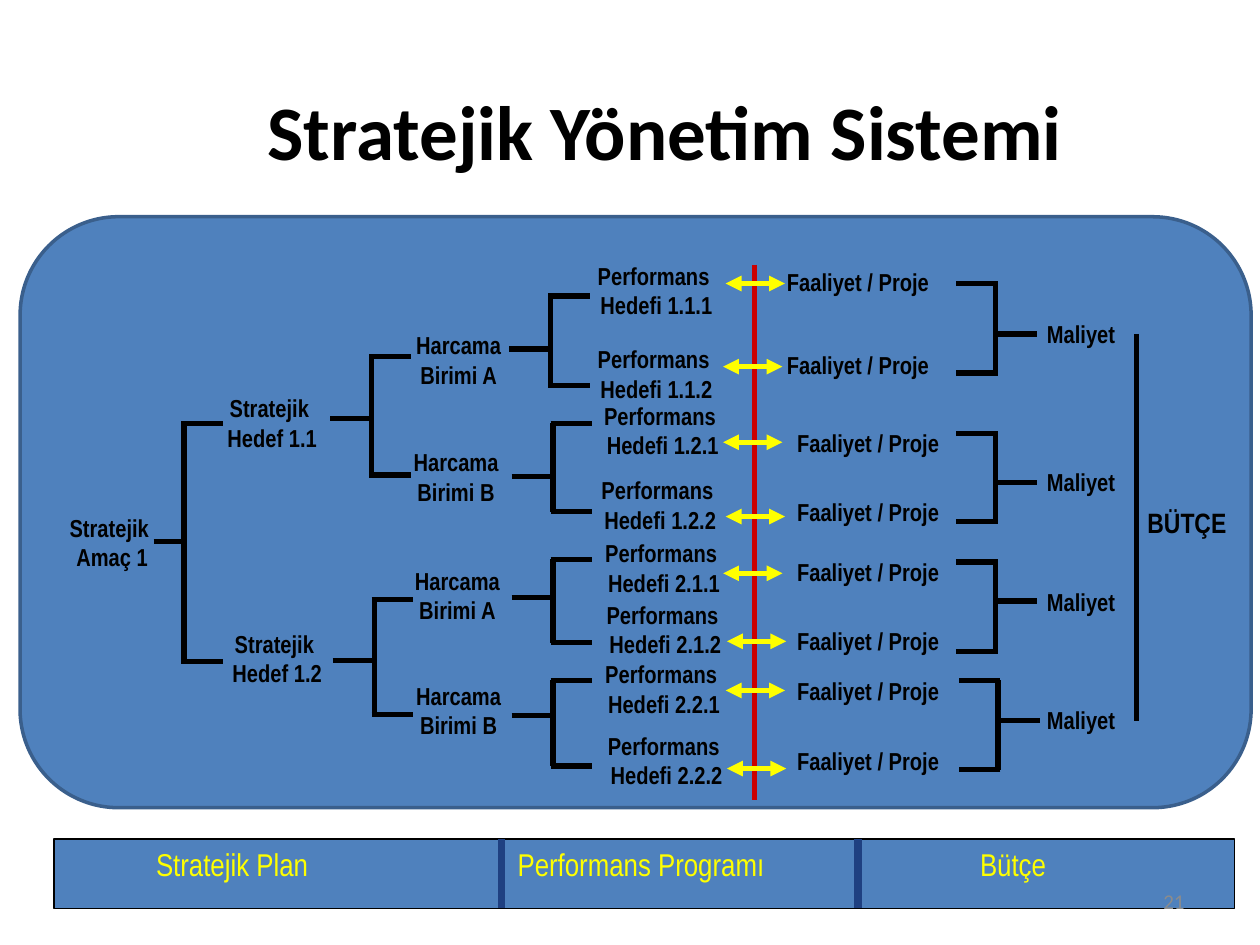
from math import copysign

from lxml.etree import SubElement
from pptx import Presentation
from pptx.dml.color import RGBColor
from pptx.enum.shapes import MSO_CONNECTOR, MSO_SHAPE
from pptx.enum.text import MSO_ANCHOR, PP_ALIGN
from pptx.oxml.ns import qn
from pptx.util import Inches, Pt

WIDTH, HEIGHT = Inches(10), Inches(7.5)
COLS, ROWS = 100, 75
NARROW, BODY = "Arial Narrow", "Calibri"
BLACK, BLUE, YELLOW = "000000", "4F81BD", "FFFF00"

# stub, spine, tip, top, middle, bottom
FORKS = [
    (12.2, 14.6, 17.7, 33.6, 43, 52.5),
    (26.2, 29.5, 32.6, 28.3, 33.2, 37.7),
    (26.4, 29.7, 32.8, 47.6, 52.4, 56.7),
    (40.4, 43.7, 46.8, 23.5, 27.7, 30.6),
    (40.6, 43.9, 47, 33.6, 37.8, 40.6),
    (40.6, 43.9, 47, 44.4, 47.4, 51),
    (40.6, 43.9, 47, 54, 56.8, 60.8),
    (82.3, 79, 75.9, 22.5, 26.5, 29.6),
    (82.3, 79, 75.9, 34.4, 38.3, 41.4),
    (82.3, 79, 75.9, 44.6, 47.7, 51.7),
    (82.5, 79.2, 76.1, 54, 57.2, 61.1),
]
BRANCHES = [
    ("Stratejik \nAmaç 1", 3.8, 39.9),
    ("Stratejik \nHedef 1.1", 16.5, 30.4),
    ("Stratejik \nHedef 1.2", 16.9, 49.1),
    ("Harcama\nBirimi A", 31.3, 25.4),
    ("Harcama\nBirimi B", 31.1, 34.7),
    ("Harcama\nBirimi A", 31.2, 44.1),
    ("Harcama\nBirimi B", 31.3, 53.2),
]
# number, target left and top, arrow left and row, activity left and top
TARGETS = [
    ("1.1.1", 47, 19.9, 57.6, 22.5, 60.2, 19.2),
    ("1.1.2", 47, 26.5, 57.4, 29.1, 60.2, 25.8),
    ("1.2.1", 47.5, 31, 57.4, 35.1, 61, 32),
    ("1.2.2", 47.3, 36.9, 57.6, 41, 61, 37.5),
    ("2.1.1", 47.6, 41.9, 57.4, 45.5, 61, 42.2),
    ("2.1.2", 47.7, 46.8, 57.7, 50.9, 61, 47.7),
    ("2.2.1", 47.6, 51.5, 57.6, 54.8, 61, 51.7),
    ("2.2.2", 47.8, 57.2, 57.7, 61, 61, 57.2),
]
COST_TOPS = [23.3, 35.1, 44.6, 54]
PHASES = [("Stratejik Plan", 11.4, 19.7), ("Performans Programı", 40.1, 34.7), ("Bütçe", 76.8, 19.7)]


def col(n):
    return round(WIDTH * n / COLS)


def row(n):
    return round(HEIGHT * n / ROWS)


def color(hex_code):
    return RGBColor.from_string(hex_code)


def add_panel(s, kind, x, y, w, h, line, weight):
    sp = s.shapes.add_shape(kind, col(x), row(y), col(w), row(h))
    sp.shadow.inherit = False
    sp.fill.solid()
    sp.fill.fore_color.rgb = color(BLUE)
    sp.line.color.rgb = color(line)
    sp.line.width = Pt(weight)


def add_line(s, x1, y1, x2, y2, line=BLACK, weight=3, arrows=False):
    sp = s.shapes.add_connector(MSO_CONNECTOR.STRAIGHT, col(x1), row(y1), col(x2), row(y2))
    sp.line.color.rgb = color(line)
    sp.line.width = Pt(weight)
    if arrows:
        ln = sp.line._get_or_add_ln()
        for end in ("a:headEnd", "a:tailEnd"):
            SubElement(ln, qn(end), type="triangle")
    SubElement(sp._element.spPr, qn("a:effectLst"))


def add_fork(s, stub, spine, tip, top, middle, bottom):
    corner = spine - copysign(0.2, tip - spine)
    add_line(s, stub, middle, spine, middle)
    add_line(s, spine, top, spine, bottom)
    for y in (top, bottom):
        add_line(s, corner, y, tip, y)


def add_text(s, text, x, y, w, h, size=14, font=NARROW, fill=BLACK, bold=True,
             align=PP_ALIGN.CENTER, anchor=MSO_ANCHOR.MIDDLE, wrap=True):
    tf = s.shapes.add_textbox(col(x), row(y), col(w), row(h)).text_frame
    tf.word_wrap = wrap
    tf.vertical_anchor = anchor
    tf.text = text
    for p in tf.paragraphs:
        p.alignment = align
        for r in p.runs:
            r.font.name = font
            r.font.size = Pt(size)
            r.font.bold = bold
            r.font.color.rgb = color(fill)
    return tf


def add_label(s, text, x, y, w=10.2, size=14):
    tf = add_text(s, text, x, y, w, 6.3, size, wrap=False)
    tf.margin_left = tf.margin_right = 0


def add_tree(s):
    for fork in FORKS:
        add_fork(s, *fork)
    for text, x, y in BRANCHES:
        add_label(s, text, x, y)
    add_line(s, 59.9, 21, 59.9, 63.5, "CC0000")
    for number, x, y, arrow_x, arrow_y, activity_x, activity_y in TARGETS:
        add_label(s, f"Performans \nHedefi {number}", x, y)
        add_line(s, arrow_x, arrow_y, arrow_x + 4.7, arrow_y, YELLOW, arrows=True)
        add_label(s, "Faaliyet / Proje", activity_x, activity_y, 15.8)
    for y in COST_TOPS:
        add_label(s, "Maliyet", 80.7, y)
    add_line(s, 90.2, 26.5, 90.2, 57.2)
    add_label(s, "BÜTÇE", 89.1, 38.3, size=16)


def add_phase_bar(s):
    add_panel(s, MSO_SHAPE.RECTANGLE, 4.3, 66.6, 93.7, 5.5, BLACK, 0.75)
    for x in (39.8, 68.1):
        add_line(s, x, 66.6, x, 72.1, "1F4081", 4.5)
    for text, x, w in PHASES:
        add_text(s, text, x, 66.6, w, 4, 18, fill=YELLOW, bold=False,
                 align=PP_ALIGN.LEFT, anchor=MSO_ANCHOR.TOP)


def main():
    prs = Presentation()
    prs.slide_width, prs.slide_height = WIDTH, HEIGHT
    s = prs.slides.add_slide(prs.slide_layouts[6])
    add_panel(s, MSO_SHAPE.ROUNDED_RECTANGLE, 1.6, 17.2, 97.7, 46.9, "3A5F8C", 2)
    add_text(s, "Stratejik Yönetim Sistemi", 7.8, 5, 90, 10.6, 44, BODY)
    add_tree(s)
    add_phase_bar(s)
    add_text(s, "21", 71.7, 69.5, 23.3, 4, 12, BODY, "8C8C8C", False, PP_ALIGN.RIGHT)
    prs.save("out.pptx")


if __name__ == "__main__":
    main()
